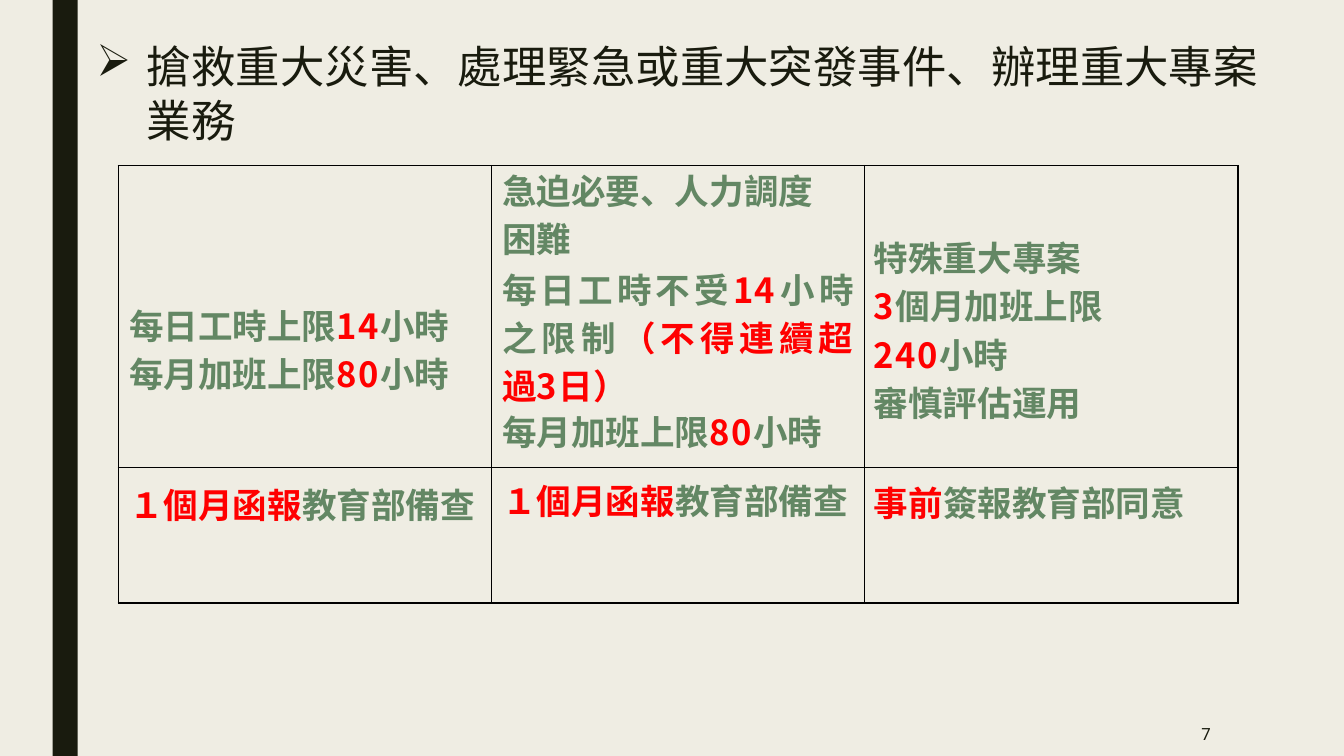
from pptx import Presentation
from pptx.dml.color import RGBColor
from pptx.enum.shapes import MSO_SHAPE
from pptx.enum.text import MSO_ANCHOR, PP_ALIGN
from pptx.oxml import parse_xml
from pptx.oxml.ns import nsdecls
from pptx.util import Pt

INK, GREEN, RED = "191B0E", "638764", "FF0000"
SANS, BODY = "Roboto", "Noto Sans CJK SC"
SIZE, LINE = 24.7, 29.6


def color(code):
    return RGBColor.from_string(code)


def add_run(para, text, size, font, code, bold=False, gap=0):
    run = para.add_run()
    run.text = text
    run.font.size, run.font.name, run.font.bold = Pt(size), font, bold
    run.font.color.rgb = color(code)
    props = run.font._element
    props.append(parse_xml(f'<a:ea {nsdecls("a")} typeface="{font}"/>'))
    if gap:
        props.set("spc", str(round(gap * 100)))


def add_box(slide, box, insets=(0, 0, 0, 0)):
    frame = slide.shapes.add_textbox(*map(Pt, box)).text_frame
    frame.word_wrap = True
    (frame.margin_left, frame.margin_top,
     frame.margin_right, frame.margin_bottom) = map(Pt, insets)
    return frame


def add_bar(slide, box):
    bar = slide.shapes.add_shape(MSO_SHAPE.RECTANGLE, *map(Pt, box))
    bar.shadow.inherit = False
    bar.fill.solid()
    bar.fill.fore_color.rgb = color(INK)
    bar.line.fill.background()


def add_title(slide, box, text):
    para = add_box(slide, box, (0, 0.9, 0, 0)).paragraphs[0]
    para.space_before, para.line_spacing = Pt(0.8), Pt(38)
    props = para._p.get_or_add_pPr()
    props.set("marL", str(Pt(36.5)))
    props.set("indent", str(-Pt(36)))
    props.append(parse_xml(f'<a:buChar {nsdecls("a")} char="➢"/>'))
    add_run(para, text, 31.7, SANS, INK, gap=0.1)


def add_grid(slide, box, heights, count):
    left, top, width, height = box
    frame = slide.shapes.add_table(len(heights), count, *map(Pt, box))
    table = frame.table
    table.first_row = table.horz_banding = False
    for col in table.columns:
        col.width = Pt(width / count)
    for row, high in zip(table.rows, heights):
        row.height = Pt(high)
    for cell in table.iter_cells():
        props = cell._tc.get_or_add_tcPr()
        for side in ("lnL", "lnR", "lnT", "lnB"):
            props.append(parse_xml(
                f'<a:{side} {nsdecls("a")} w="{Pt(1)}"><a:solidFill>'
                f'<a:srgbClr val="000000"/></a:solidFill></a:{side}>'))
        cell.fill.background()


def add_rule(slide, box, lines):
    """Each line is (space before, line height, alignment, runs)."""
    frame = add_box(slide, box)
    for i, (before, height, align, runs) in enumerate(lines):
        para = frame.add_paragraph() if i else frame.paragraphs[0]
        para.space_before, para.line_spacing = Pt(before), Pt(height)
        para.alignment = align
        for text, code, gap in runs:
            add_run(para, text, SIZE, BODY, code, True, gap)


def add_page(slide, box, text):
    frame = add_box(slide, box, (7.2, 3.6, 7.2, 3.6))
    frame.vertical_anchor = MSO_ANCHOR.MIDDLE
    frame.paragraphs[0].alignment = PP_ALIGN.RIGHT
    add_run(frame.paragraphs[0], text, 12, SANS, INK)


def green(text):
    return text, GREEN, 0


def red(text, gap=0):
    return text, RED, gap


def line(before, *runs, height=LINE, align=PP_ALIGN.LEFT):
    return before, height, align, runs


def first(*runs):
    return line(0, *runs, height=SIZE)


def main():
    deck = Presentation()
    deck.slide_width, deck.slide_height = Pt(960), Pt(540)
    slide = deck.slides.add_slide(deck.slide_layouts[6])
    slide.background.fill.solid()
    slide.background.fill.fore_color.rgb = color("EFEDE3")

    add_bar(slide, (37.5, 0, 18, 540))
    add_title(slide, (68.4, 27.4, 859.7, 77.8),
              "搶救重大災害、處理緊急或重大突發事件、辦理重大專案業務")
    add_grid(slide, (84.4, 118.2, 800, 312.5), (216, 96.5), 3)

    # Overtime rules, one box per column
    month = (green("每月加班上限"), red("80", 1), green("小時"))
    report = (red("１個月函報"), green("教育部備查"))
    add_rule(slide, (92.2, 222.5, 247.7, 153.4), [
        first(green("每日工時上限"), red("14", 1), green("小時")),
        line(4.9, *month),
        line(64, *report),
    ])
    add_rule(slide, (358.6, 126, 251.3, 249.8), [
        first(green("急迫必要、人力調度")),
        line(4.9, green("困難")),
        line(1.9, green("每日工時不受"), red("14", 1), green("小時 之限制"),
             red("（不得連續超 過"), red("3", 1), red("日）"),
             height=34.5, align=PP_ALIGN.JUSTIFY),
        line(2.9, *month),
        line(19.7, *report),
    ])
    add_rule(slide, (624.2, 174.2, 243.4, 200.2), [
        first(green("特殊重大專案")),
        line(4.9, red("3", 1), green("個月加班上限")),
        line(4.9, red("240", 1), green("小時")),
        line(4.9, green("審慎評估運用")),
        line(41.8, red("事前"), green("簽報教育部同意")),
    ])

    add_page(slide, (745.9, 508.3, 126, 31.7), "7")
    deck.save("out.pptx")


if __name__ == "__main__":
    main()
